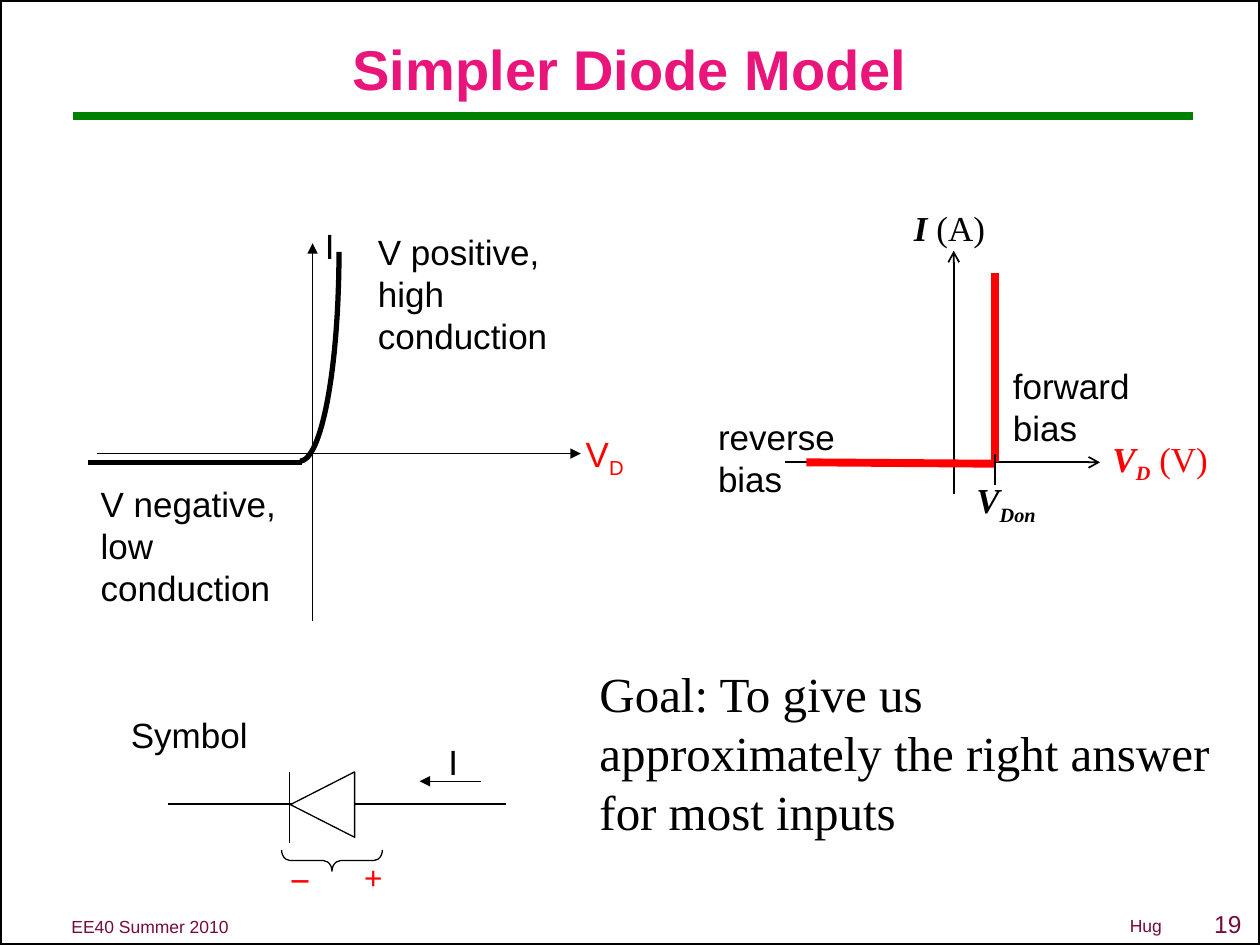
import math
from dataclasses import dataclass
from typing import Optional

from lxml import etree
from pptx import Presentation
from pptx.dml.color import RGBColor
from pptx.enum.shapes import MSO_CONNECTOR, MSO_SHAPE
from pptx.enum.text import MSO_ANCHOR, PP_ALIGN
from pptx.oxml.ns import qn
from pptx.util import Pt

STRAIGHT = MSO_CONNECTOR.STRAIGHT
RECTANGLE = MSO_SHAPE.RECTANGLE
TRIANGLE = MSO_SHAPE.ISOSCELES_TRIANGLE
BRACE = MSO_SHAPE.RIGHT_BRACE
LEFT, CENTER = PP_ALIGN.LEFT, PP_ALIGN.CENTER
TOP, MIDDLE = MSO_ANCHOR.TOP, MSO_ANCHOR.MIDDLE


@dataclass(frozen=True)
class Theme:
    black: str = "000000"
    white: str = "FFFFFF"
    red: str = "FF0000"
    green: str = "008000"
    pink: str = "EA157A"
    plum: str = "750B3D"
    sans: str = "Arial"
    serif: str = "Times New Roman"
    title: float = 32
    goal: float = 28
    label: float = 20
    plus: float = 18
    number: float = 14
    footer: float = 10
    thin: float = 0.75
    axis: float = 1
    border: float = 2.25
    curve: float = 3
    heavy: float = 4.5


THEME = Theme()


@dataclass(frozen=True)
class Span:
    text: str
    strong: bool = False  # bold italic
    lowered: bool = False  # subscript


@dataclass(frozen=True)
class Label:
    left: float
    top: float
    width: float
    height: float
    spans: tuple[Span, ...]
    size: float = THEME.label
    color: str = THEME.black
    font: str = THEME.sans
    align: PP_ALIGN = LEFT
    anchor: MSO_ANCHOR = TOP
    bold: bool = False
    wrap: bool = True
    inset: bool = True


@dataclass(frozen=True)
class Line:
    x1: float
    y1: float
    x2: float
    y2: float
    width: float = THEME.thin
    color: str = THEME.black
    arrow: Optional[str] = None


@dataclass(frozen=True)
class Outline:
    kind: MSO_SHAPE
    left: float
    top: float
    width: float
    height: float
    line_width: float = THEME.thin
    rotation: float = 0
    fill: Optional[str] = None
    adjustment: Optional[float] = None


def draw_label(page, label: Label) -> None:
    box = page.shapes.add_textbox(
        Pt(label.left), Pt(label.top), Pt(label.width), Pt(label.height))
    frame = box.text_frame
    frame.word_wrap = label.wrap
    frame.vertical_anchor = label.anchor
    if not label.inset:
        frame.margin_left = frame.margin_right = Pt(0)
        frame.margin_top = frame.margin_bottom = Pt(0)
    para = frame.paragraphs[0]
    para.alignment = label.align
    for span in label.spans:
        run = para.add_run()
        run.text = span.text
        run.font.name = label.font
        run.font.size = Pt(label.size)
        run.font.color.rgb = RGBColor.from_string(label.color)
        run.font.bold = label.bold or span.strong
        run.font.italic = span.strong
        if span.lowered:
            run.font._element.set("baseline", "-25000")


def draw_line(page, line: Line) -> None:
    connector = page.shapes.add_connector(
        STRAIGHT, Pt(line.x1), Pt(line.y1), Pt(line.x2), Pt(line.y2))
    connector.line.width = Pt(line.width)
    connector.line.color.rgb = RGBColor.from_string(line.color)
    if line.arrow:
        etree.SubElement(connector.line._get_or_add_ln(), qn("a:tailEnd"), type=line.arrow)
    etree.SubElement(connector._element.spPr, qn("a:effectLst"))


def style_outline(shape, width: float, fill: Optional[str] = None) -> None:
    shape.shadow.inherit = False
    shape.line.width = Pt(width)
    shape.line.color.rgb = RGBColor.from_string(THEME.black)
    if fill:
        shape.fill.solid()
        shape.fill.fore_color.rgb = RGBColor.from_string(fill)
    else:
        shape.fill.background()


def draw_outline(page, outline: Outline) -> None:
    shape = page.shapes.add_shape(
        outline.kind, Pt(outline.left), Pt(outline.top), Pt(outline.width), Pt(outline.height))
    shape.rotation = outline.rotation
    if outline.adjustment is not None:
        shape.adjustments[0] = outline.adjustment
    style_outline(shape, outline.line_width, outline.fill)


def draw_quarter_ellipse(page, left: float, top: float, width: float, height: float) -> None:
    """Rise from the bottom left corner to the top right corner."""
    steps = 32
    angles = [math.pi / 2 * step / steps for step in range(steps + 1)]
    points = [(Pt(left + width * math.sin(angle)), Pt(top + height * math.cos(angle)))
              for angle in angles]
    builder = page.shapes.build_freeform(*points[0])
    builder.add_line_segments(points[1:], close=False)
    style_outline(builder.convert_to_shape(), THEME.curve)


FRAME = (
    Label(683.3, 515.5, 36.7, 24.5, (Span("19"),), THEME.number, THEME.plum,
          align=CENTER, anchor=MIDDLE),
    Label(33.8, 519.8, 105, 19.4, (Span("EE40 Summer 2010"),), THEME.footer, THEME.plum, wrap=False),
    Label(638.6, 519.1, 33, 19.4, (Span("Hug"),), THEME.footer, THEME.plum, wrap=False),
    Line(41.8, 66.2, 681.8, 66.2, THEME.heavy, THEME.green),
    Outline(RECTANGLE, 0, 0, 720, 540, THEME.border),
    Label(36, 18, 648, 41.8, (Span("Simpler Diode Model"),), THEME.title, THEME.pink,
          align=CENTER, anchor=MIDDLE, bold=True),
)

REAL_DIODE = (
    Line(178.6, 354.9, 178.6, 139, arrow="triangle"),
    Line(55.4, 259.2, 331.9, 259.2, arrow="triangle"),
    Label(178.6, 124.6, 35.3, 31, (Span("I"),)),
    Label(327.6, 243.4, 49, 31.7, (Span("V"), Span("D", lowered=True)), color=THEME.red),
    Label(208.8, 128.2, 135.4, 79.9, (Span("V positive, high conduction"),)),
    Line(50.4, 264.2, 172.8, 264.2, THEME.curve),
    Label(50.4, 272.2, 145.4, 79.9, (Span("V negative, low conduction"),)),
)

SYMBOL = (
    Label(249.1, 419.8, 31, 31, (Span("I"),)),
    Line(95.8, 459.4, 289.4, 459.4),
    Line(165.6, 441.4, 165.6, 481.7),
    Outline(TRIANGLE, 165.6, 441.4, 37.4, 36.7, rotation=270, fill=THEME.white),
    Outline(BRACE, 183.6, 463, 12.2, 57.6, rotation=90, adjustment=0.4),
    Line(275, 446.4, 239.8, 446.4, arrow="triangle"),
    Label(67.7, 403.9, 252, 31, (Span("Symbol"),)),
    Label(208.1, 490.3, 10.1, 21.6, (Span("+"),), THEME.plus, THEME.red, wrap=False, inset=False),
    Label(165.6, 490.3, 14.4, 23.8, (Span("−"),), color=THEME.red, inset=False),
)

SIMPLE_MODEL = (
    Line(545, 282.2, 545, 143.3, THEME.axis, arrow="arrow"),
    Line(448.6, 264.2, 628.6, 264.2, THEME.axis, arrow="arrow"),
    Line(460.8, 264.2, 568.8, 265, THEME.heavy, THEME.red),
    Line(568.8, 156.2, 568.8, 264.2, THEME.heavy, THEME.red),
    Label(403.2, 234, 123.1, 31, (Span("reverse bias"),), wrap=False),
    Label(571.7, 204.5, 123.1, 31, (Span("forward bias"),), wrap=False),
    Label(502.6, 114.5, 79.9, 31, (Span("I ", strong=True), Span("(A)")),
          font=THEME.serif, align=CENTER),
    Label(628.6, 246.2, 72, 31,
          (Span("V", strong=True), Span("D", strong=True, lowered=True), Span(" (V)")),
          color=THEME.red, font=THEME.serif),
    Label(550.8, 270, 72, 31, (Span("V", strong=True), Span("Don", strong=True, lowered=True)),
          font=THEME.serif),
    Line(568.8, 259.2, 568.8, 277.2, THEME.axis),
    Label(335.5, 375.8, 365, 108.7,
          (Span("Goal: To give us approximately the right answer for most inputs"),),
          THEME.goal, font=THEME.serif),
)

DRAWERS = {Label: draw_label, Line: draw_line, Outline: draw_outline}


def main() -> None:
    deck = Presentation()
    deck.slide_width, deck.slide_height = Pt(720), Pt(540)
    page = deck.slides.add_slide(deck.slide_layouts[6])
    for part in FRAME + REAL_DIODE + SYMBOL + SIMPLE_MODEL:
        DRAWERS[type(part)](page, part)
    # Exponential rise of the real diode
    draw_quarter_ellipse(page, 171.4, 144, 22.3, 119.5)
    deck.save("out.pptx")


if __name__ == "__main__":
    main()
